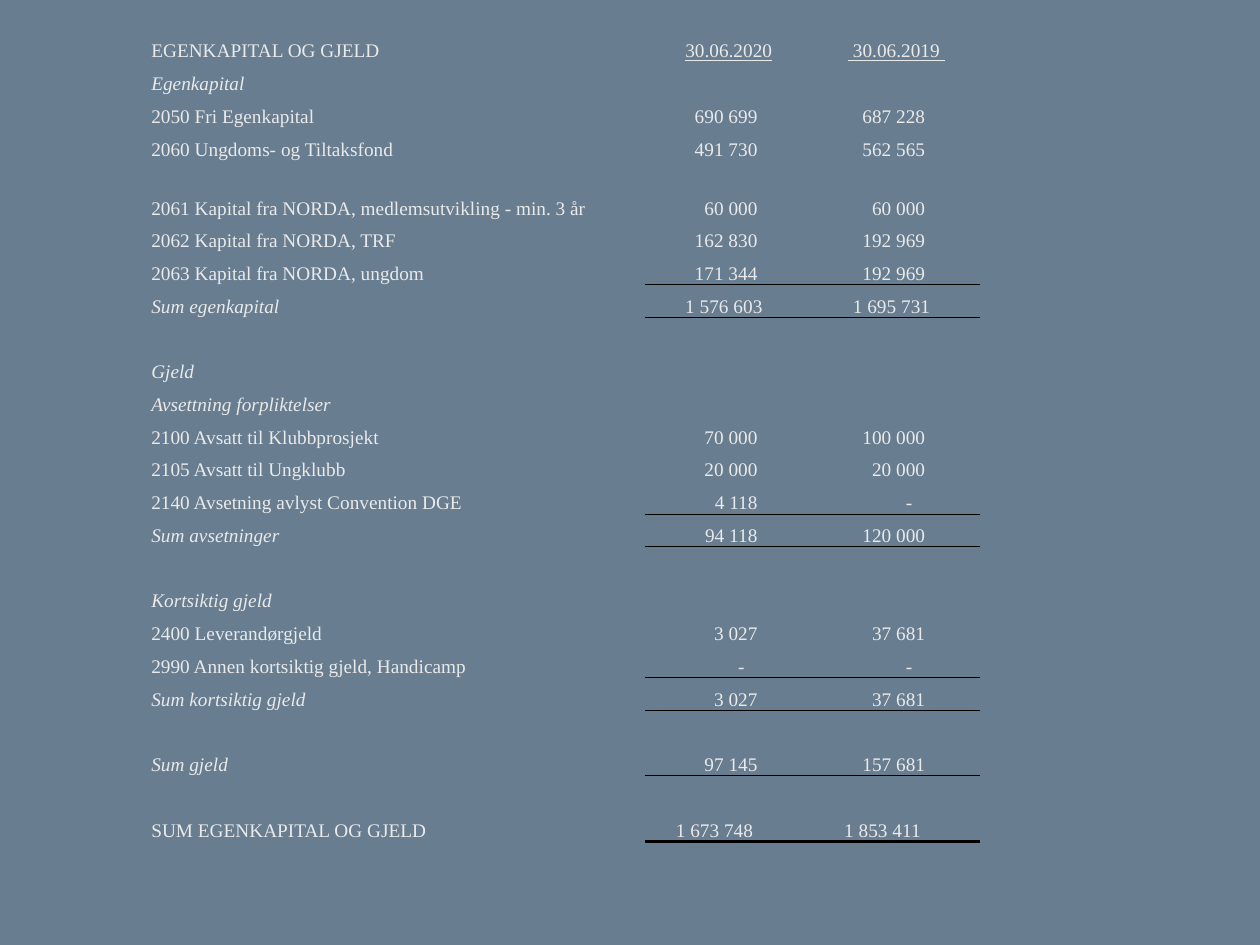
"""Build a balance sheet slide of equity and debt."""
import pptx
import pptx.dml.color
import pptx.enum.text
import pptx.oxml.ns
import pptx.util
from lxml import etree

Cm = pptx.util.Cm
qn = pptx.oxml.ns.qn
ALIGN = pptx.enum.text.PP_ALIGN
PLAIN = "{2D5ABB26-0587-4C30-8999-92F81FD0307C}"
THIN, THICK = 0.5, 2
WIDTHS = [8.71, 1.27, 3.38, 3.38]
HEAD, TALL, ROW = 0.74, 1.19, 0.66

ROWS = [
    ("EGENKAPITAL OG GJELD", "30.06.2020", " 30.06.2019 ", 0),
    ("Egenkapital", "", "", 0),
    ("2050 Fri Egenkapital", "690 699", "687 228", 0),
    ("2060 Ungdoms- og Tiltaksfond", "491 730", "562 565", 0),
    ("2061 Kapital fra NORDA, medlemsutvikling - min. 3 år", "60 000", "60 000", 0),
    ("2062 Kapital fra NORDA, TRF", "162 830", "192 969", 0),
    ("2063 Kapital fra NORDA, ungdom", "171 344", "192 969", THIN),
    ("Sum egenkapital", "1 576 603", "1 695 731", THIN),
    ("", "", "", 0),
    ("Gjeld", "", "", 0),
    ("Avsettning forpliktelser", "", "", 0),
    ("2100 Avsatt til Klubbprosjekt", "70 000", "100 000", 0),
    ("2105 Avsatt til Ungklubb", "20 000", "20 000", 0),
    ("2140 Avsetning avlyst Convention DGE", "4 118", "-", THIN),
    ("Sum avsetninger", "94 118", "120 000", THIN),
    ("", "", "", 0),
    ("Kortsiktig gjeld", "", "", 0),
    ("2400 Leverandørgjeld", "3 027", "37 681", 0),
    ("2990 Annen kortsiktig gjeld, Handicamp", "-", "-", THIN),
    ("Sum kortsiktig gjeld", "3 027", "37 681", THIN),
    ("", "", "", 0),
    ("Sum gjeld", "97 145", "157 681", THIN),
    ("", "", "", 0),
    ("SUM EGENKAPITAL OG GJELD", "1 673 748", "1 853 411", THICK),
]


def tint(code):
    return pptx.dml.color.RGBColor.from_string(code)


def inset(label, text):
    if text == "-":
        return 1.37
    if len(text) < 9:
        return 1.11
    return 1.2 if label.isupper() else 1.01


class Sheet:
    def __init__(self, slide):
        self.slide = slide
        self.ink = "EAEAEA"
        self.line = "000000"
        self.font = {"name": "Times New Roman", "size": pptx.util.Pt(11)}
        self.cell = {"margin_left": Cm(0.03), "margin_right": Cm(0.03),
                     "margin_top": Cm(0.03), "margin_bottom": 0,
                     "vertical_anchor": pptx.enum.text.MSO_ANCHOR.BOTTOM}

    def back(self, code):
        fill = self.slide.background.fill
        fill.solid()
        fill.fore_color.rgb = tint(code)

    def grid(self, left, top, widths, heights):
        frame = self.slide.shapes.add_table(
            len(heights), len(widths), Cm(left), Cm(top),
            Cm(sum(widths)), Cm(sum(heights)))
        table = frame.table
        table.first_row = table.horz_banding = False
        table._tbl.tblPr.find(qn("a:tableStyleId")).text = PLAIN
        for col, width in zip(table.columns, widths):
            col.width = Cm(width)
        for row, height in zip(table.rows, heights):
            row.height = Cm(height)
        return table

    def rule(self, cell, width):
        line = etree.SubElement(cell._tc.get_or_add_tcPr(), qn("a:lnB"),
                                w=str(pptx.util.Pt(width)))
        fill = etree.SubElement(line, qn("a:solidFill"))
        etree.SubElement(fill, qn("a:srgbClr"), val=self.line)

    def label(self, cell, text="", align=ALIGN.LEFT, gap=0.03, width=0, **look):
        for key, value in {**self.cell, "margin_right": Cm(gap)}.items():
            setattr(cell, key, value)
        if width:
            self.rule(cell, width)
        cell.fill.background()
        para = cell.text_frame.paragraphs[0]
        para.alignment = align
        if not text:
            etree.SubElement(para._p, qn("a:endParaRPr"), sz="1100")
            return
        run = para.add_run()
        run.text = text
        for key, value in {**self.font, **look}.items():
            setattr(run.font, key, value)
        run.font.color.rgb = tint(self.ink)


def main():
    deck = pptx.Presentation()
    deck.slide_width, deck.slide_height = Cm(25.4), Cm(19.05)
    sheet = Sheet(deck.slides.add_slide(deck.slide_layouts[6]))
    sheet.back("687D90")
    heights = [HEAD] + [ROW] * (len(ROWS) - 1)
    heights[4] = TALL
    table = sheet.grid(3.02, 0.51, WIDTHS, heights)
    for i, (name, *values, width) in enumerate(ROWS):
        slant = not (name.isupper() or name[:1].isdigit())
        sheet.label(table.cell(i, 0), name, italic=slant)
        sheet.label(table.cell(i, 1))
        for j, text in enumerate(values, 2):
            cell = table.cell(i, j)
            if i == 0:
                sheet.label(cell, text, ALIGN.CENTER, underline=True)
            else:
                sheet.label(cell, text, ALIGN.RIGHT, inset(name, text), width)
    table.cell(4, 0).merge(table.cell(4, 1))
    deck.save("out.pptx")


if __name__ == "__main__":
    main()
